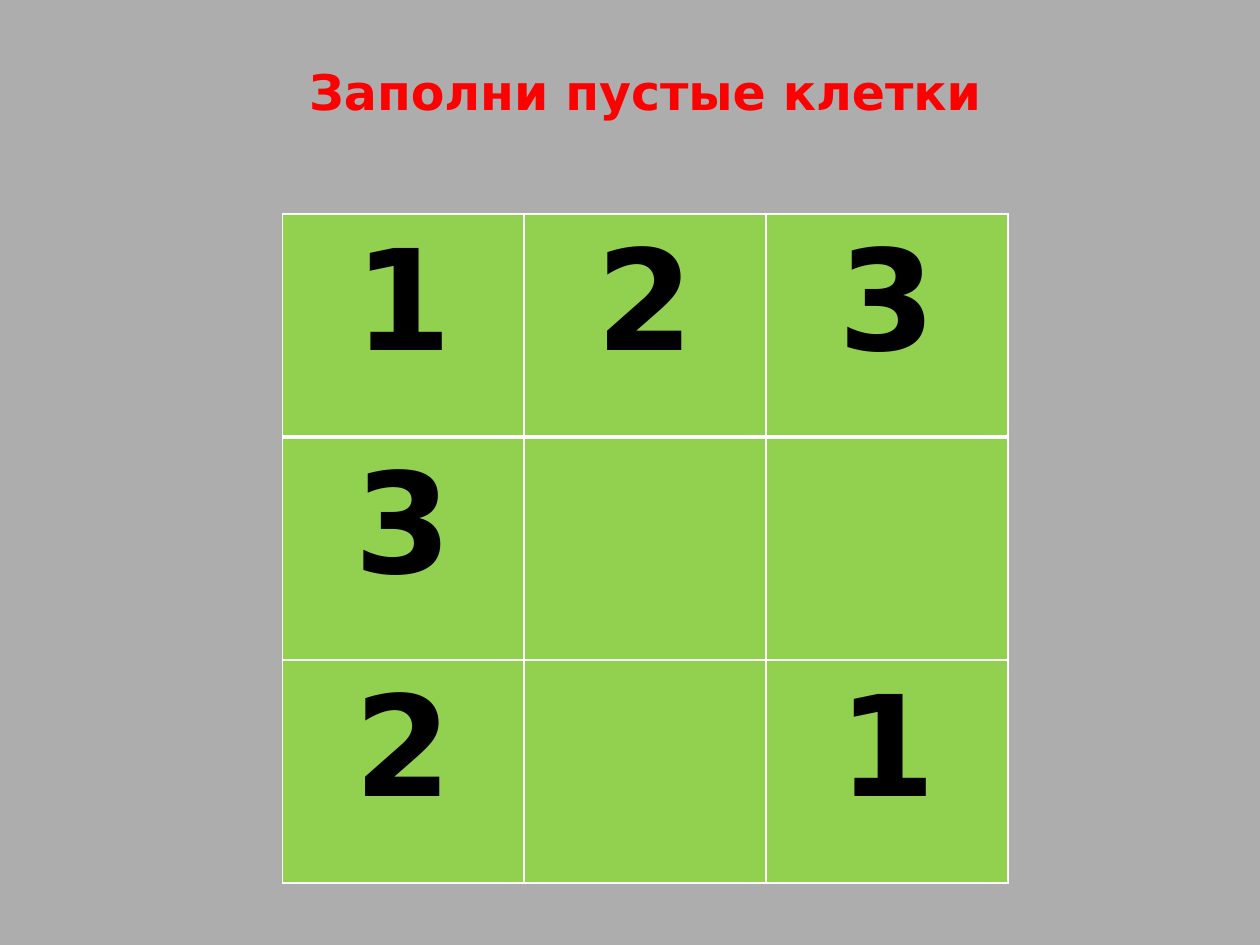
from dataclasses import dataclass

from lxml import etree
from pptx import Presentation
from pptx.dml.color import RGBColor
from pptx.enum.text import MSO_ANCHOR, PP_ALIGN
from pptx.oxml.ns import qn
from pptx.util import Inches, Pt

CENTER = PP_ALIGN.CENTER
TOP = MSO_ANCHOR.TOP
TITLE_ONLY = 5


@dataclass(frozen=True)
class Theme:
    font: str = "DejaVu Sans"
    background: str = "ADADAD"
    title: str = "FF0000"
    digit: str = "000000"
    cell: str = "92D050"
    border: str = "FFFFFF"
    title_size: int = 28
    digit_size: int = 80
    thin: int = 1
    thick: int = 3


theme = Theme()


def write_text(frame, text, size, color):
    """Write one bold centred line with small, even margins."""
    frame.margin_left = frame.margin_right = Inches(0.05)
    frame.margin_top = frame.margin_bottom = Inches(0.05)
    frame.text = text
    para = frame.paragraphs[0]
    para.alignment = CENTER
    for span in para.runs:
        span.font.name = theme.font
        span.font.size = Pt(size)
        span.font.bold = True
        span.font.color.rgb = RGBColor.from_string(color)


def add_border(cell, side, width):
    """Draw one side of a table cell."""
    properties = cell._tc.get_or_add_tcPr()
    line = etree.SubElement(properties, qn(f"a:ln{side}"), w=str(Pt(width)))
    fill = etree.SubElement(line, qn("a:solidFill"))
    etree.SubElement(fill, qn("a:srgbClr"), val=theme.border)


# Slide and background
deck = Presentation()
deck.slide_width = Inches(10)
deck.slide_height = Inches(7.5)
page = deck.slides.add_slide(deck.slide_layouts[TITLE_ONLY])
page.background.fill.solid()
page.background.fill.fore_color.rgb = RGBColor.from_string(theme.background)

# Number square
digits = [
    ["1", "2", "3"],
    ["3", "", ""],
    ["2", "", "1"],
]
size = len(digits)
square = page.shapes.add_table(
    size, size, Inches(2.24), Inches(1.7), Inches(5.76), Inches(5.31)
).table

for row, row_digits in enumerate(digits):
    for column, digit in enumerate(row_digits):
        cell = square.cell(row, column)
        # A thick rule separates the first row from the rest
        widths = {
            "L": theme.thin,
            "R": theme.thin,
            "T": theme.thick if row == 1 else theme.thin,
            "B": theme.thick if row == 0 else theme.thin,
        }
        for side, width in widths.items():
            add_border(cell, side, width)
        cell.fill.solid()
        cell.fill.fore_color.rgb = RGBColor.from_string(theme.cell)
        cell.margin_left = cell.margin_right = Inches(0.05)
        cell.margin_top = cell.margin_bottom = Inches(0.05)
        if digit:
            write_text(cell.text_frame, digit, theme.digit_size, theme.digit)

# Title
title = page.shapes.title
title.left, title.top = Inches(1.22), Inches(0.44)
title.width, title.height = Inches(7.8), Inches(0.57)
title.text_frame.vertical_anchor = TOP
write_text(title.text_frame, "Заполни пустые клетки", theme.title_size, theme.title)

deck.save("out.pptx")
